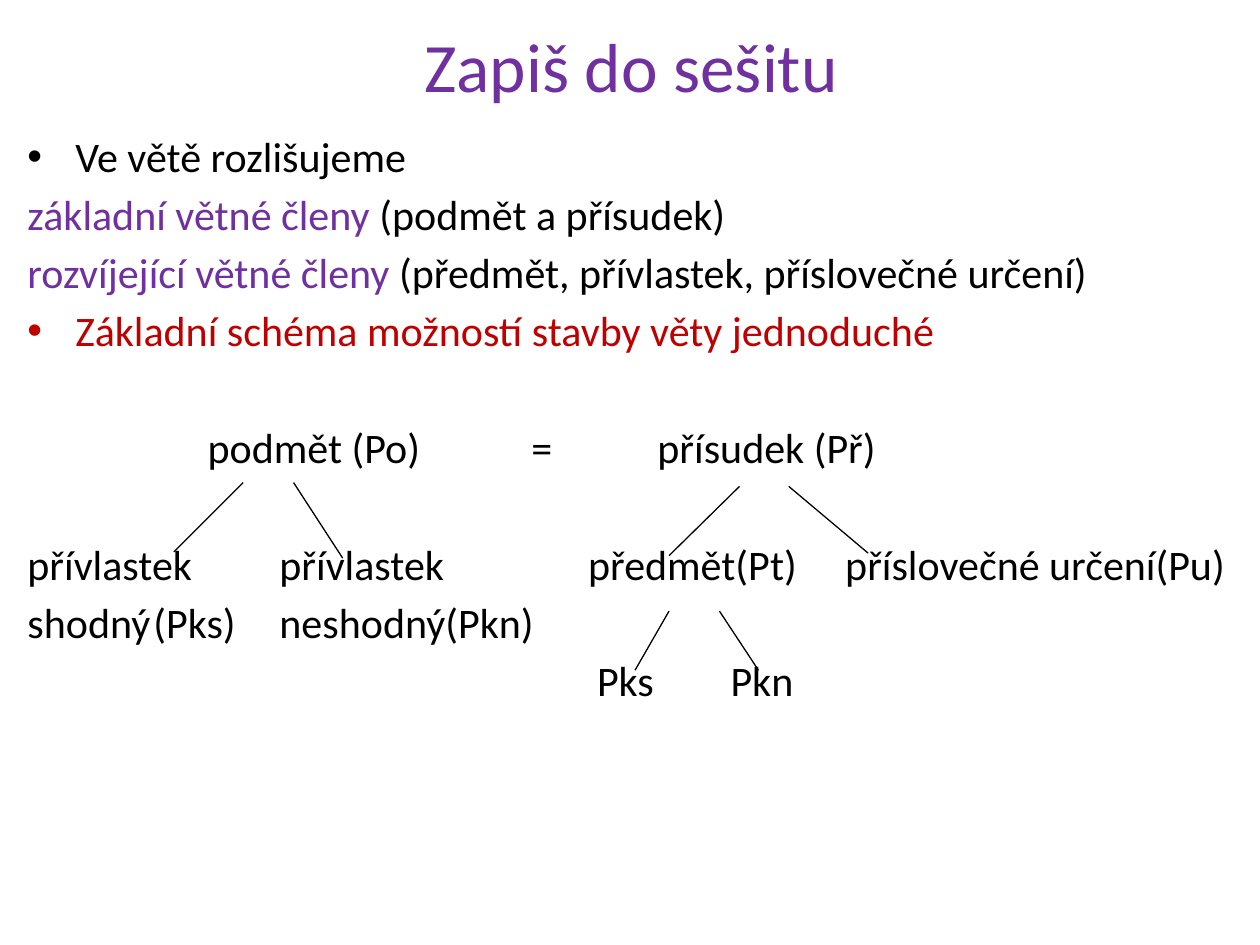
import pptx
import pptx.util
import pptx.dml.color
import pptx.enum.shapes
import pptx.enum.text
import pptx.oxml.ns
from lxml import etree

Inches, Pt = pptx.util.Inches, pptx.util.Pt
PURPLE, RED, BLACK = "7030A0", "C00000", "000000"
GAP = 4.3          # points before each paragraph
SKIP = 37.9        # the same gap plus one empty line

TITLE = [dict(runs=[("Zapiš do sešitu", PURPLE)])]

NOTES = [
    dict(runs=[("Ve větě rozlišujeme", BLACK)], bullet=True, before=0),
    dict(runs=[("základní větné členy ", PURPLE),
               ("(podmět a přísudek)", BLACK)]),
    dict(runs=[("rozvíjející větné členy ", PURPLE),
               ("(předmět, přívlastek, příslovečné určení)", BLACK)]),
    dict(runs=[("Základní schéma možností stavby věty jednoduché", RED)],
         bullet=True),
    dict(runs=[("\tpodmět (Po)\t=\tpřísudek (Př)", BLACK)],
         tabs=[1.43, 4, 5], before=SKIP),
    dict(runs=[("přívlastek\tpřívlastek\tpředmět(Pt)\tpříslovečné určení(Pu)", BLACK)],
         tabs=[2, 4.45, 6.49], before=SKIP),
    dict(runs=[("shodný\t(Pks)\tneshodný(Pkn)", BLACK)], tabs=[1, 2]),
    dict(runs=[("\tPks\tPkn", BLACK)], tabs=[4.52, 5.58]),
]

BRANCHES = [  # x from, y from, x to, y to
    (1.93, 3.83, 1.38, 4.38), (2.33, 3.83, 2.72, 4.43),
    (5.87, 3.86, 5.31, 4.41), (6.26, 3.86, 6.89, 4.39),
    (5.31, 4.85, 5.04, 5.32), (5.71, 4.85, 6.02, 5.32),
]


def color(code):
    return pptx.dml.color.RGBColor.from_string(code)


def add(node, tag, **attrs):
    return etree.SubElement(node, pptx.oxml.ns.qn(tag), attrs)


def layout(para, bullet, tabs):
    """Give a paragraph its bullet with hanging indent, and its tab stops."""
    props = para._p.get_or_add_pPr()
    if bullet:
        props.set("marL", str(Inches(0.38)))
        props.set("indent", str(-Inches(0.38)))
        add(props, "a:buFont", typeface="Arial")
        add(props, "a:buChar", char="•")
    if tabs:
        stops = add(props, "a:tabLst")
        for stop in tabs:
            add(stops, "a:tab", pos=str(Inches(stop)), algn="l")


def write(slide, paras, at, size, align="LEFT", anchor="TOP"):
    frame = slide.shapes.add_textbox(*map(Inches, at)).text_frame
    frame.word_wrap = True
    frame.vertical_anchor = getattr(pptx.enum.text.MSO_ANCHOR, anchor)
    for num, item in enumerate(paras):
        para = frame.add_paragraph() if num else frame.paragraphs[0]
        layout(para, item.get("bullet"), item.get("tabs"))
        para.alignment = getattr(pptx.enum.text.PP_ALIGN, align)
        para.space_before = Pt(item.get("before", GAP if num else 0))
        for text, code in item["runs"]:
            run = para.add_run()
            run.text = text
            run.font.name, run.font.size = "Calibri", Pt(size)
            run.font.color.rgb = color(code)


def branch(slide, ends):
    kind = pptx.enum.shapes.MSO_CONNECTOR.STRAIGHT
    line = slide.shapes.add_connector(kind, *map(Inches, ends))
    line.line.color.rgb = color(BLACK)
    line.line.width = Pt(0.75)
    add(line._element.spPr, "a:effectLst")


def main():
    deck = pptx.Presentation()
    deck.slide_width, deck.slide_height = Inches(10), Inches(7.5)
    slide = deck.slides.add_slide(deck.slide_layouts[6])
    write(slide, TITLE, (0.51, 0.13, 9, 0.77), 39.6, align="CENTER", anchor="MIDDLE")
    write(slide, NOTES, (0.12, 0.99, 9.76, 6.3), 24)
    for ends in BRANCHES:
        branch(slide, ends)
    deck.save("out.pptx")


if __name__ == "__main__":
    main()
